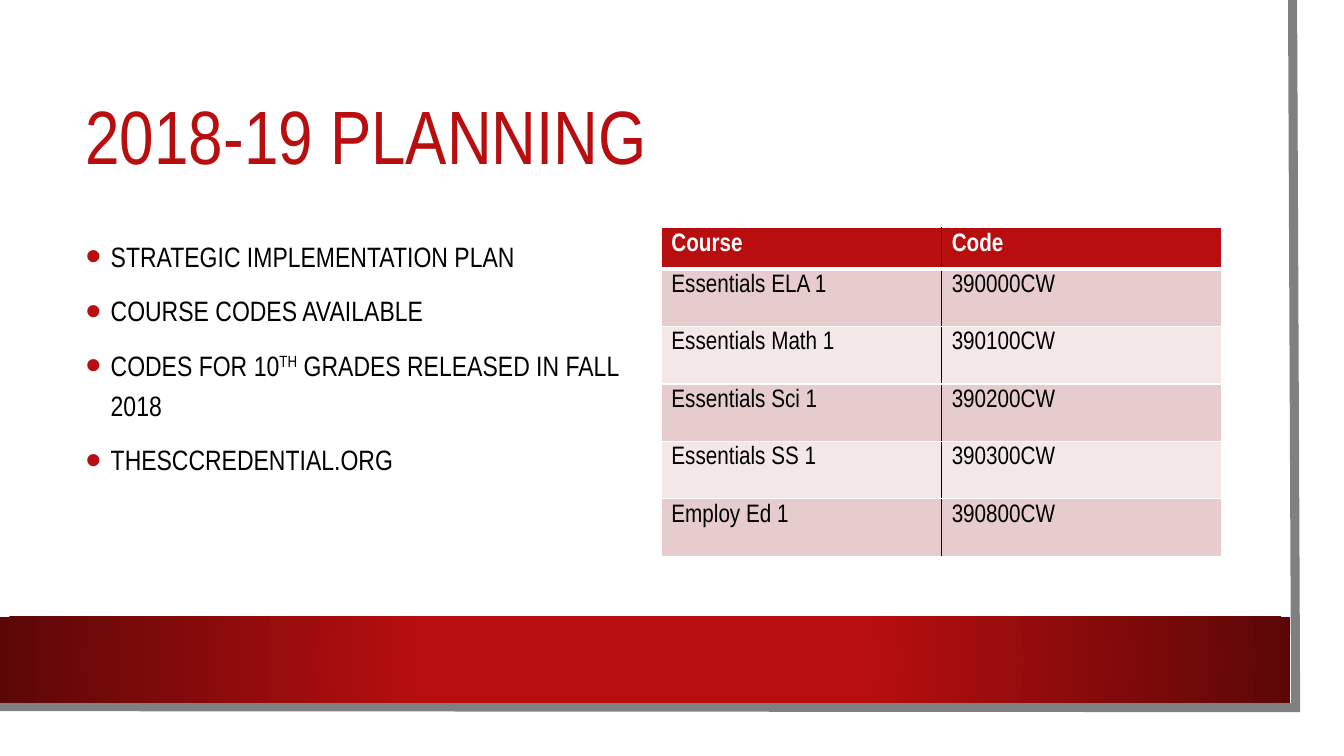
from dataclasses import dataclass

from lxml import etree
from pptx import Presentation
from pptx.dml.color import RGBColor
from pptx.enum.shapes import MSO_SHAPE
from pptx.enum.text import MSO_ANCHOR
from pptx.oxml.ns import qn
from pptx.util import Inches, Pt

RECT = MSO_SHAPE.RECTANGLE
TOP = MSO_ANCHOR.TOP
MIDDLE = MSO_ANCHOR.MIDDLE


@dataclass(frozen=True)
class Theme:
    font: str = "Arial Narrow"
    red: str = "B80E0F"
    dark: str = "5C0707"
    gray: str = "808080"
    white: str = "FFFFFF"
    black: str = "000000"
    rose: str = "E6CCCC"
    blush: str = "F3E7E7"
    title: int = 54
    body: int = 20
    cell: int = 18


THEME = Theme()

POINTS = [
    [("STRATEGIC IMPLEMENTATION PLAN", 0)],
    [("COURSE CODES AVAILABLE", 0)],
    [("CODES FOR 10", 0), ("TH", 30), (" GRADES RELEASED IN FALL 2018", 0)],
    [("THESCCREDENTIAL.ORG", 0)],
]

COURSES = [
    ("Course", "Code"),
    ("Essentials ELA 1", "390000CW"),
    ("Essentials Math 1", "390100CW"),
    ("Essentials Sci 1", "390200CW"),
    ("Essentials SS 1", "390300CW"),
    ("Employ Ed 1", "390800CW"),
]


def paint(fill, color):
    fill.solid()
    fill.fore_color.rgb = RGBColor.from_string(color)


def add_node(parent, tag, **attrs):
    return etree.SubElement(parent, qn(tag), {k: str(v) for k, v in attrs.items()})


def add_run(para, text, size, color, bold=False, raised=0):
    run = para.add_run()
    run.text = text
    font = run.font
    font.name = THEME.font
    font.size = Pt(size)
    font.bold = bold
    font.color.rgb = RGBColor.from_string(color)
    if raised:
        font._element.set("baseline", str(raised * 1000))


def add_rect(slide, left, top, width, height):
    rect = slide.shapes.add_shape(
        RECT, Inches(left), Inches(top), Inches(width), Inches(height))
    rect.shadow.inherit = False
    rect.line.fill.background()
    return rect


def add_page(slide):
    page = add_rect(slide, 0, 0, 13.1, 7.27)
    paint(page.fill, THEME.white)


def add_edge(slide):
    pen = slide.shapes.build_freeform(Inches(12.82), 0)
    corners = [(12.85, 7.02), (-0.03, 7.01)]
    pen.add_line_segments([(Inches(x), Inches(y)) for x, y in corners], close=False)
    edge = pen.convert_to_shape()
    edge.shadow.inherit = False
    edge.fill.background()
    edge.line.width = Pt(6.5)
    edge.line.color.rgb = RGBColor.from_string(THEME.gray)
    add_node(edge._element.spPr.find(qn("a:ln")), "a:miter", lim=800000)


def add_band(slide):
    band = add_rect(slide, 0, 6.12, 12.8, 0.85)
    band.fill.gradient()
    stops = [(0.34, THEME.red), (1, THEME.dark)]
    for stop, (place, color) in zip(band.fill.gradient_stops, stops):
        stop.position = place
        stop.color.rgb = RGBColor.from_string(color)
    grad = band._element.spPr.find(qn("a:gradFill"))
    grad.remove(grad.find(qn("a:lin")))
    glow = add_node(grad, "a:path", path="circle")
    add_node(glow, "a:fillToRect", l=50000, t=50000, r=50000, b=50000)


def add_box(slide, left, top, width, height, anchor):
    box = slide.shapes.add_textbox(
        Inches(left), Inches(top), Inches(width), Inches(height))
    frame = box.text_frame
    frame.word_wrap = True
    frame.vertical_anchor = anchor
    return frame


def add_title(slide, text):
    frame = add_box(slide, 0.75, 0.75, 11.37, 1.27, MIDDLE)
    para = frame.paragraphs[0]
    para.line_spacing = 0.9
    add_run(para, text, THEME.title, THEME.red)


def add_bullet(para):
    props = para._p.get_or_add_pPr()
    props.set("marL", str(Inches(0.25)))
    props.set("indent", str(-Inches(0.25)))
    add_node(add_node(props, "a:buClr"), "a:srgbClr", val=THEME.red)
    add_node(props, "a:buSzPct", val=160000)
    add_node(props, "a:buFont", typeface="Arial")
    add_node(props, "a:buChar", char="•")


def add_list(slide, points):
    frame = add_box(slide, 0.75, 2.26, 5.57, 3.62, TOP)
    for i, runs in enumerate(points):
        para = frame.add_paragraph() if i else frame.paragraphs[0]
        add_bullet(para)
        para.line_spacing = 1.2
        if i:
            para.space_before = Pt(10)
        for text, raised in runs:
            add_run(para, text, THEME.body, THEME.black, raised=raised)


def add_border(cell, sides):
    props = cell._tc.get_or_add_tcPr()
    for i, (side, color, width) in enumerate(sides):
        line = etree.Element(qn("a:ln" + side), {"w": str(Pt(width))})
        add_node(add_node(line, "a:solidFill"), "a:srgbClr", val=color)
        props.insert(i, line)


def fill_cell(cell, text, row, col):
    head = row == 0
    shade = THEME.red if head else THEME.rose if row % 2 else THEME.blush
    paint(cell.fill, shade)
    cell.vertical_anchor = TOP
    cell.margin_top = cell.margin_bottom = Inches(0.05)
    color = THEME.white if head else THEME.black
    add_run(cell.text_frame.paragraphs[0], text, THEME.cell, color, bold=head)
    add_border(cell, [
        ("L", THEME.black if col else THEME.white, 1),
        ("R", THEME.white if col else THEME.black, 1),
        ("T", THEME.white, 3 if row == 1 else 1),
        ("B", THEME.white, 3 if head else 1),
    ])


def add_grid(slide, data):
    frame = slide.shapes.add_table(
        len(data), len(data[0]),
        Inches(6.56), Inches(2.26), Inches(5.56), Inches(3.26))
    grid = frame.table
    for r, texts in enumerate(data):
        grid.rows[r].height = Inches(0.57 if r else 0.41)
        for c, text in enumerate(texts):
            fill_cell(grid.cell(r, c), text, r, c)


def main():
    deck = Presentation()
    deck.slide_width = Inches(13.33)
    deck.slide_height = Inches(7.5)
    slide = deck.slides.add_slide(deck.slide_layouts[6])
    add_page(slide)
    add_edge(slide)
    add_band(slide)
    add_title(slide, "2018-19 PLANNING")
    add_list(slide, POINTS)
    add_grid(slide, COURSES)
    deck.save("out.pptx")


if __name__ == "__main__":
    main()
